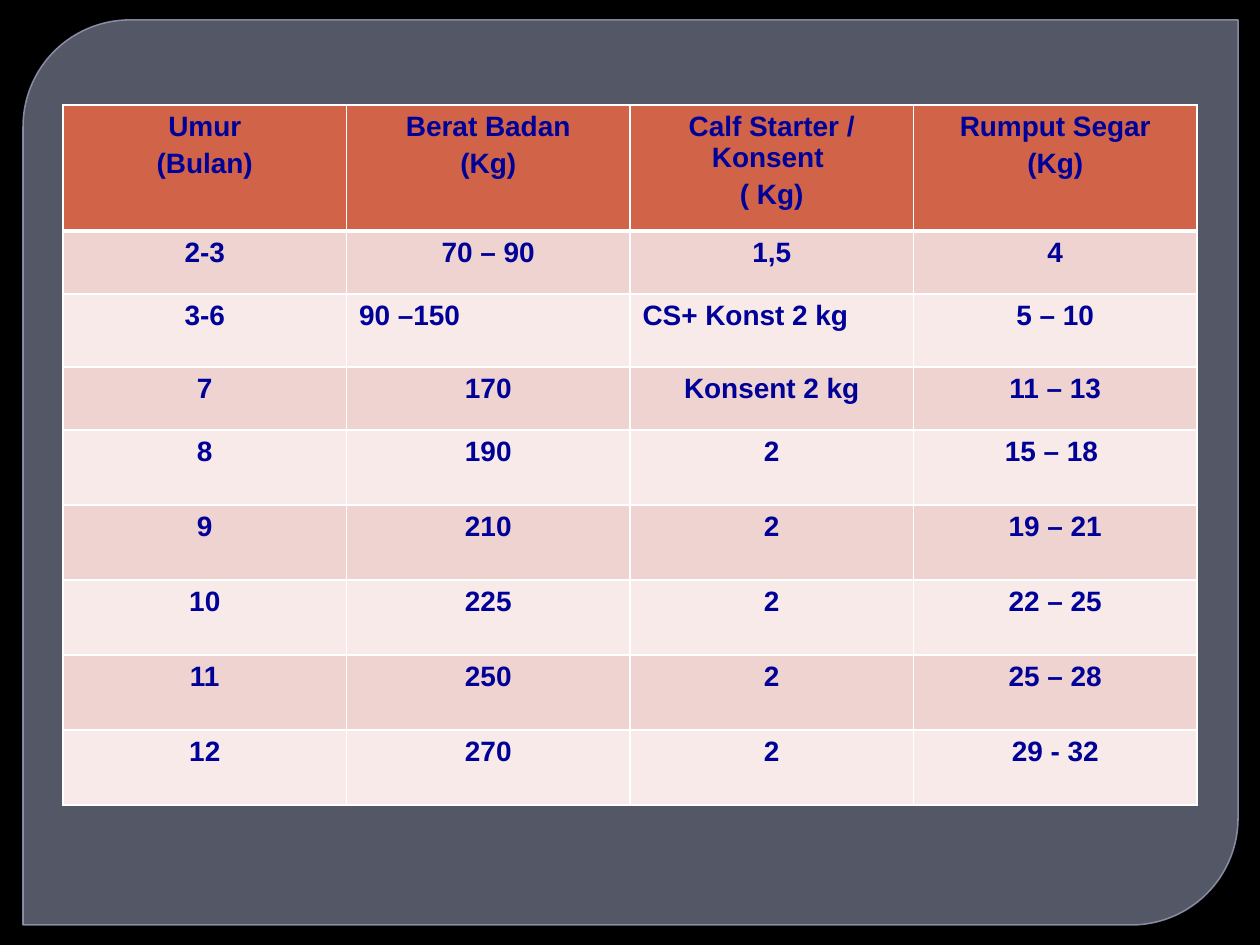
import lxml.etree
import pptx
import pptx.dml.color
import pptx.enum.shapes
import pptx.enum.text
import pptx.oxml.ns
import pptx.util

# Content: one tuple of paragraphs per heading, one row per age group
HEADINGS = [
    ("Umur", "(Bulan)"),
    ("Berat Badan", "(Kg)"),
    ("Calf Starter / Konsent ", "( Kg)"),
    ("Rumput Segar", "(Kg)"),
]
FEEDING = [
    ("2-3", "70 – 90", "1,5", "4"),
    ("3-6", "90 –150", "CS+ Konst 2 kg", "5 – 10"),
    ("7", "170", "Konsent 2 kg", "11 – 13"),
    ("8", "190", "2", "15 – 18 "),
    ("9", "210", "2", "19 – 21"),
    ("10", "225", "2", "22 – 25"),
    ("11", "250", "2", "25 – 28"),
    ("12", "270", "2", "29 - 32"),
]
LEFT_ALIGNED = {"90 –150", "CS+ Konst 2 kg"}

THEME = {
    "background": "000000",
    "panel": "80869E",
    "panel_line": "9298B2",
    "header": "D16349",
    "bands": ("EED3D0", "F7EAE9"),
    "border": "FFFFFF",
    "text": "000099",
    "font": "Arial",
    "size": 16,
    "space_before": 3.2,
}

# Layout in px
SLIDE_SIZE = (1260, 945)
PANEL = (23, 20, 1215, 905)
TABLE_LEFT, TABLE_TOP, TABLE_WIDTH = 63, 105, 1134
ROW_HEIGHTS = [126, 63, 73, 63] + [75] * 5


def px(value):
    return pptx.util.Emu(round(value * 914400 / 126))


def color(name):
    return pptx.dml.color.RGBColor.from_string(name)


def set_fill(fill, name):
    fill.solid()
    fill.fore_color.rgb = color(name)


def add_child(parent, tag, **attributes):
    return lxml.etree.SubElement(parent, pptx.oxml.ns.qn(tag), attributes)


def set_opacity(properties, percent):
    solid = properties.find(pptx.oxml.ns.qn("a:solidFill"))
    add_child(solid[0], "a:alpha", val=str(percent * 1000))


def set_borders(cell, widths):
    properties = cell._tc.get_or_add_tcPr()
    for side, width in widths.items():
        line = add_child(properties, f"a:ln{side}", w=str(pptx.util.Pt(width)))
        add_child(add_child(line, "a:solidFill"), "a:srgbClr", val=THEME["border"])


def write_cell(cell, lines):
    cell.text = "\n".join(lines)
    align = pptx.enum.text.PP_ALIGN
    font_format = {
        "name": THEME["font"],
        "size": pptx.util.Pt(THEME["size"]),
        "bold": True,
    }
    for paragraph in cell.text_frame.paragraphs:
        paragraph.alignment = align.LEFT if paragraph.text in LEFT_ALIGNED else align.CENTER
        paragraph.space_before = pptx.util.Pt(THEME["space_before"])
        font = paragraph.runs[0].font
        for attribute, value in font_format.items():
            setattr(font, attribute, value)
        font.color.rgb = color(THEME["text"])


def add_panel(slide):
    kind = pptx.enum.shapes.MSO_SHAPE.ROUND_2_DIAG_RECTANGLE
    panel = slide.shapes.add_shape(kind, *map(px, PANEL))
    panel.shadow.inherit = False
    panel.adjustments[0] = 0.118
    panel.adjustments[1] = 0
    set_fill(panel.fill, THEME["panel"])
    set_opacity(panel._element.spPr, 65)
    set_fill(panel.line.fill, THEME["panel_line"])
    panel.line.width = pptx.util.Pt(0.87)
    set_opacity(panel.line._ln, 88)


def add_feeding_table(slide):
    rows = [HEADINGS] + [[(text,) for text in row] for row in FEEDING]
    frame = slide.shapes.add_table(
        len(rows), len(HEADINGS),
        px(TABLE_LEFT), px(TABLE_TOP), px(TABLE_WIDTH), px(sum(ROW_HEIGHTS)))
    table = frame.table
    for column in table.columns:
        column.width = px(TABLE_WIDTH / len(HEADINGS))
    for index, row in enumerate(rows):
        table.rows[index].height = px(ROW_HEIGHTS[index])
        # A thick rule separates the header from the body
        borders = {"L": 1, "R": 1, "T": 3 if index == 1 else 1, "B": 3 if index == 0 else 1}
        fill = THEME["bands"][(index - 1) % 2] if index else THEME["header"]
        for cell, lines in zip(table.rows[index].cells, row):
            write_cell(cell, lines)
            set_borders(cell, borders)
            set_fill(cell.fill, fill)


def main():
    presentation = pptx.Presentation()
    presentation.slide_width, presentation.slide_height = map(px, SLIDE_SIZE)
    slide = presentation.slides.add_slide(presentation.slide_layouts[6])
    set_fill(slide.background.fill, THEME["background"])
    add_panel(slide)
    add_feeding_table(slide)
    presentation.save("out.pptx")


if __name__ == "__main__":
    main()
